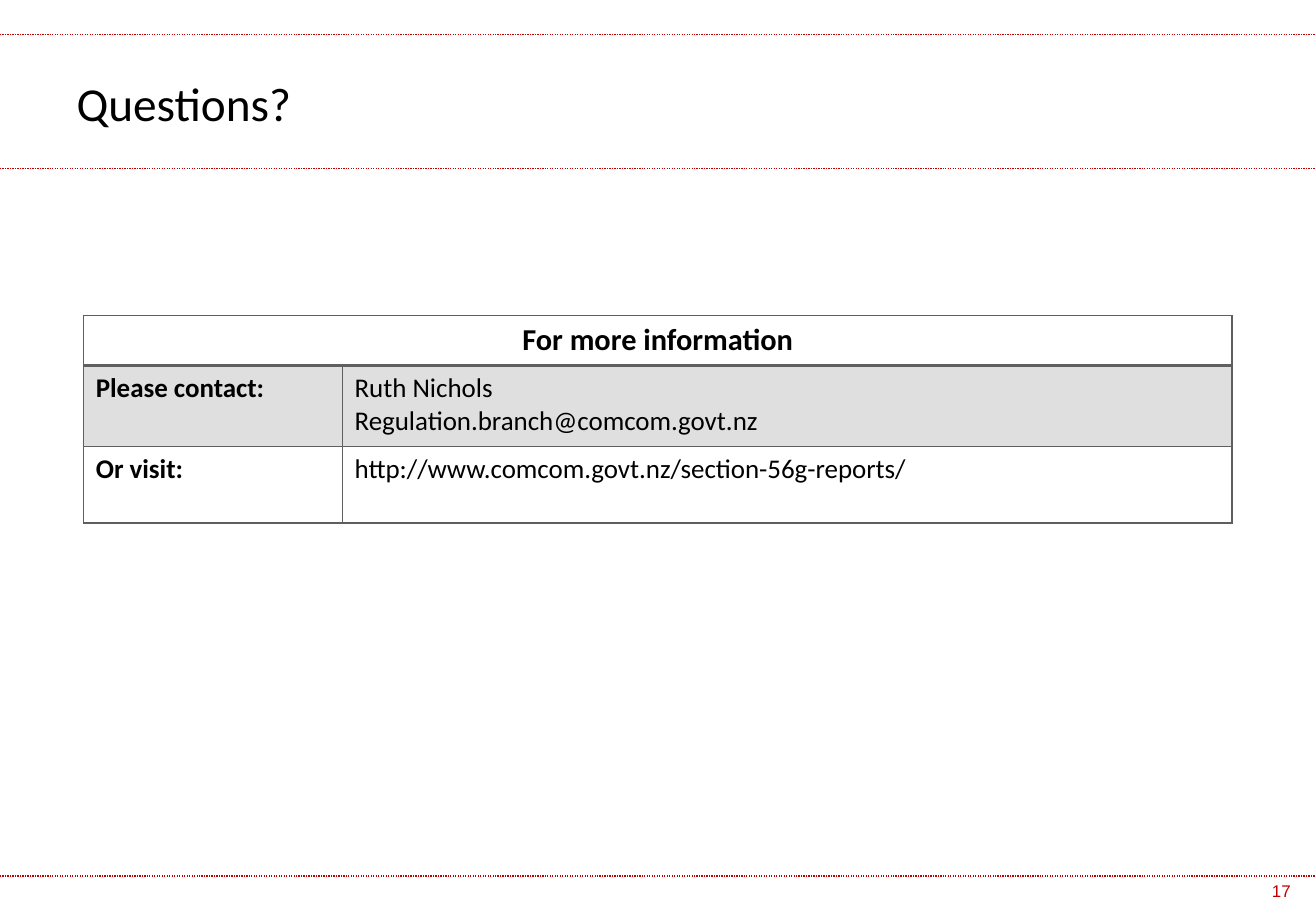
from lxml import etree
from pptx import Presentation
from pptx.dml.color import RGBColor
from pptx.enum.dml import MSO_LINE
from pptx.enum.shapes import MSO_CONNECTOR
from pptx.enum.text import MSO_ANCHOR, PP_ALIGN
from pptx.oxml.ns import qn
from pptx.util import Cm, Pt

STRAIGHT = MSO_CONNECTOR.STRAIGHT
DOTTED = MSO_LINE.ROUND_DOT
MIDDLE = MSO_ANCHOR.MIDDLE
LEFT, CENTER = PP_ALIGN.LEFT, PP_ALIGN.CENTER
COLORS = {"red": "C00000", "black": "000000", "border": "5F5F5F", "band": "DFDFDF"}


def format_text(frame, font_name, size, color, bold=False, align=LEFT):
    for paragraph in frame.paragraphs:
        paragraph.alignment = align
        for run in paragraph.runs:
            run.font.name = font_name
            run.font.size = Pt(size)
            run.font.bold = bold
            run.font.color.rgb = RGBColor.from_string(COLORS[color])


def add_borders(cell, widths):
    properties = cell._tc.get_or_add_tcPr()
    for side, width in widths.items():
        border = etree.SubElement(properties, qn(f"a:ln{side}"), w=str(Pt(width)))
        fill = etree.SubElement(border, qn("a:solidFill"))
        etree.SubElement(fill, qn("a:srgbClr"), val=COLORS["border"])


prs = Presentation()
prs.slide_width, prs.slide_height = Cm(27.51), Cm(19.05)
slide = prs.slides.add_slide(prs.slide_layouts[5])

for rule_y in (0.72, 18.32, 3.53):
    rule = slide.shapes.add_connector(
        STRAIGHT, 0, Cm(rule_y), prs.slide_width, Cm(rule_y)
    )
    rule.line.color.rgb = RGBColor.from_string(COLORS["red"])
    rule.line.width = Pt(0.75)
    rule.line.dash_style = DOTTED
    etree.SubElement(rule._element.spPr, qn("a:effectLst"))

title = slide.shapes.title
title.left, title.top, title.width, title.height = Cm(1.35), Cm(1.52), Cm(19.8), Cm(1.27)
title.text_frame.text = "Questions?"
title.text_frame.vertical_anchor = MIDDLE
format_text(title.text_frame, "Calibri", 28, "black")

page_number = slide.shapes.add_textbox(Cm(26.06), Cm(18.11), Cm(1.45), Cm(1.02)).text_frame
page_number.word_wrap = True
page_number.vertical_anchor = MIDDLE
page_number.text = "17"
format_text(page_number, "Arial", 10, "red", align=CENTER)

contact_rows = [
    ("For more information", ""),
    ("Please contact:", "Ruth Nichols\nRegulation.branch@comcom.govt.nz"),
    ("Or visit:", "http://www.comcom.govt.nz/section-56g-reports/"),
]
contacts = slide.shapes.add_table(3, 2, Cm(1.75), Cm(6.6), Cm(24), Cm(4.34)).table
contacts.first_row = False
contacts.horz_banding = False
for column, width in zip(contacts.columns, (5.41, 18.59)):
    column.width = Cm(width)
for row, height in zip(contacts.rows, (1.04, 1.7, 1.6)):
    row.height = Cm(height)
contacts.cell(0, 0).merge(contacts.cell(0, 1))

for row_index, texts in enumerate(contact_rows):
    is_heading = row_index == 0
    for column_index, text in enumerate(texts):
        cell = contacts.cell(row_index, column_index)
        add_borders(cell, {
            "L": 1,
            "R": 1,
            "T": 2 if row_index == 1 else 1,
            "B": 2 if is_heading else 1,
        })
        if row_index == 1:
            cell.fill.solid()
            cell.fill.fore_color.rgb = RGBColor.from_string(COLORS["band"])
        else:
            cell.fill.background()
        if text:
            cell.text_frame.text = text
            format_text(
                cell.text_frame, "Calibri", 18 if is_heading else 16, "black",
                bold=column_index == 0, align=CENTER if is_heading else LEFT,
            )

prs.save("out.pptx")
